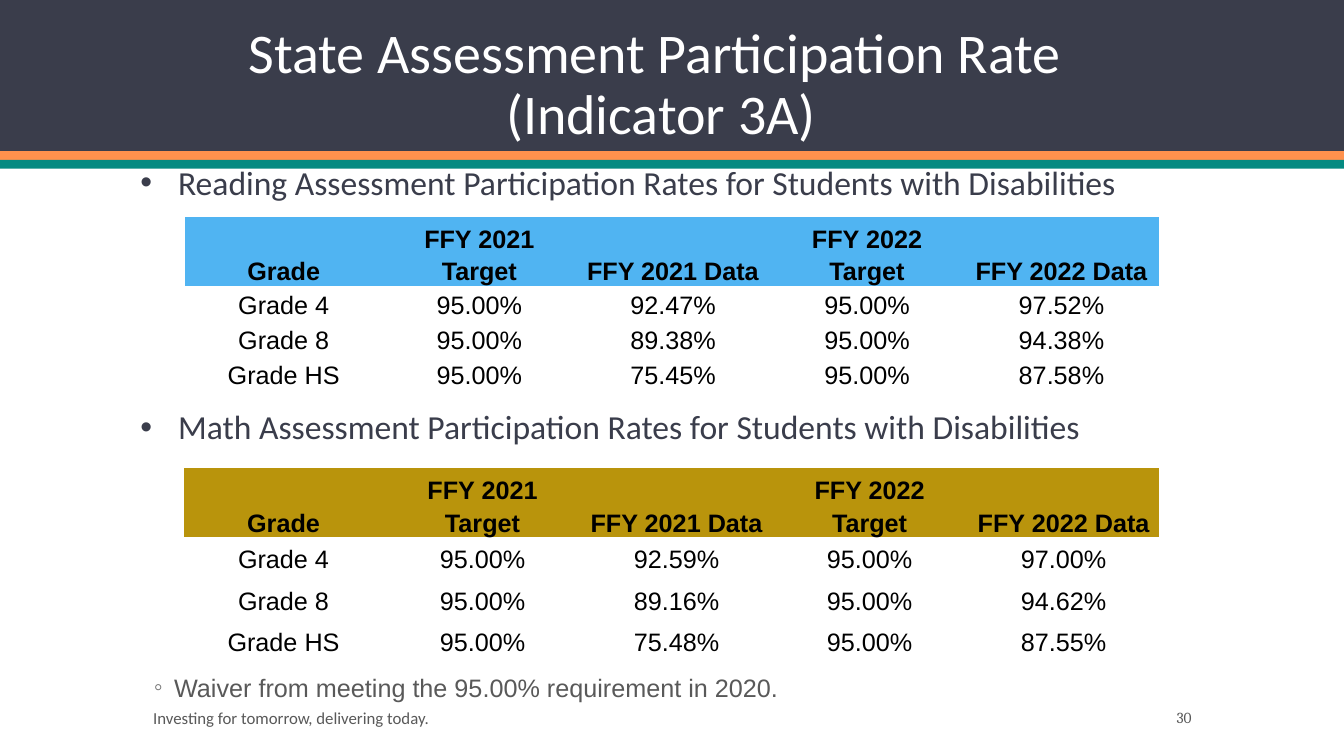
from dataclasses import dataclass
from typing import Any, Optional

import lxml.etree
import pptx
import pptx.dml.color
import pptx.enum.shapes
import pptx.enum.text
import pptx.oxml.ns
import pptx.util

Cm = pptx.util.Cm
Pt = pptx.util.Pt
RGBColor = pptx.dml.color.RGBColor
PP_ALIGN = pptx.enum.text.PP_ALIGN
MSO_ANCHOR = pptx.enum.text.MSO_ANCHOR
qn = pptx.oxml.ns.qn

NAVY = RGBColor(0x3A, 0x3D, 0x4B)
ORANGE = RGBColor(0xFF, 0x91, 0x4D)
TEAL = RGBColor(0x04, 0x8A, 0x81)
BLUE = RGBColor(0x50, 0xB4, 0xF2)
GOLD = RGBColor(0xB9, 0x94, 0x0C)
WHITE = RGBColor(0xFF, 0xFF, 0xFF)
BLACK = RGBColor(0, 0, 0)
GREY = RGBColor(0x59, 0x59, 0x59)
BULLET_GREY = RGBColor(0x71, 0x71, 0x71)

PLAIN_TABLE_STYLE = "{2D5ABB26-0587-4C30-8999-92F81FD0307C}"
HEADINGS = ["Grade", "FFY 2021 Target", "FFY 2021 Data", "FFY 2022 Target", "FFY 2022 Data"]
GRADES = ["Grade 4", "Grade 8", "Grade HS"]
TARGET = "95.00%"


@dataclass
class Band:
    height: float
    color: RGBColor


@dataclass
class Bullet:
    char: str
    color: RGBColor
    margin: float
    hanging: float


@dataclass
class TextBox:
    lines: list[str]
    left: float
    top: float
    width: float
    height: float
    font: str
    size: int
    color: RGBColor
    align: PP_ALIGN = PP_ALIGN.LEFT
    anchor: MSO_ANCHOR = MSO_ANCHOR.TOP
    line_spacing: float = 1.0
    gap: float = 0
    bullet: Optional[Bullet] = None


@dataclass
class RateTable:
    left: float
    top: float
    col_widths: list[float]
    row_height: float
    color: RGBColor
    rates_2021: list[str]
    rates_2022: list[str]


HEADER_HEIGHT = 1.64
BANDS = [Band(3.81, NAVY), Band(0.22, ORANGE), Band(0.22, TEAL)]

TEXTS = [
    TextBox(["State Assessment Participation Rate \v(Indicator 3A)"], 2.69, 0, 27.94, 3.81,
            "Calibri", 40, WHITE, PP_ALIGN.CENTER, MSO_ANCHOR.BOTTOM, 0.9),
    TextBox(["Investing for tomorrow, delivering today."], 3.61, 17.7, 17.35, 0.76,
            "Calibri", 12, GREY, anchor=MSO_ANCHOR.MIDDLE),
    TextBox(["30"], 26.47, 17.7, 3.81, 0.76, "Cambria", 11, GREY,
            PP_ALIGN.RIGHT, MSO_ANCHOR.MIDDLE),
    TextBox(["Reading Assessment Participation Rates for Students with Disabilities",
             "Math Assessment Participation Rates for Students with Disabilities"],
            2.97, 4.06, 27.94, 12.67, "Calibri", 24, NAVY, line_spacing=0.9, gap=149,
            bullet=Bullet("•", NAVY, 1.27, 0.95)),
    TextBox(["Waiver from meeting the 95.00% requirement in 2020."],
            3.63, 16.81, 27.94, 1.98, "Arial", 18, GREY,
            bullet=Bullet("◦", BULLET_GREY, 0.51, 0.51)),
]

TABLES = [
    RateTable(4.66, 5.46, [4.98, 4.88, 4.88, 4.9, 4.9], 0.82, BLUE,
              ["92.47%", "89.38%", "75.45%"], ["97.52%", "94.38%", "87.58%"]),
    RateTable(4.63, 11.79, [5.03, 5.0, 4.78, 4.95, 4.83], 1.04, GOLD,
              ["92.59%", "89.16%", "75.48%"], ["97.00%", "94.62%", "87.55%"]),
]


def format_paragraph(p: Any, font: str, size: int, color: RGBColor,
                     align: PP_ALIGN, line_spacing: float, bold: bool = False) -> None:
    p.alignment = align
    p.line_spacing = line_spacing
    for r in p.runs:
        r.font.name = font
        r.font.size = Pt(size)
        r.font.bold = bold
        r.font.color.rgb = color


def add_bullet(p: Any, bullet: Bullet) -> None:
    pPr = p._p.get_or_add_pPr()
    pPr.set("marL", str(Cm(bullet.margin)))
    pPr.set("indent", str(-Cm(bullet.hanging)))
    clr = lxml.etree.SubElement(pPr, qn("a:buClr"))
    lxml.etree.SubElement(clr, qn("a:srgbClr")).set("val", str(bullet.color))
    lxml.etree.SubElement(pPr, qn("a:buFont")).set("typeface", "Arial")
    lxml.etree.SubElement(pPr, qn("a:buChar")).set("char", bullet.char)


def draw_bands(s: Any, width: int, bands: list[Band]) -> None:
    top = 0.0
    for band in bands:
        sp = s.shapes.add_shape(pptx.enum.shapes.MSO_SHAPE.RECTANGLE,
                                0, Cm(top), width, Cm(band.height))
        sp.shadow.inherit = False
        sp.fill.solid()
        sp.fill.fore_color.rgb = band.color
        sp.line.fill.background()
        top += band.height


def draw_text(s: Any, box: TextBox) -> None:
    sp = s.shapes.add_textbox(Cm(box.left), Cm(box.top), Cm(box.width), Cm(box.height))
    tf = sp.text_frame
    tf.word_wrap = True
    tf.vertical_anchor = box.anchor
    for i, line in enumerate(box.lines):
        p = tf.add_paragraph() if i else tf.paragraphs[0]
        p.text = line
        format_paragraph(p, box.font, box.size, box.color, box.align, box.line_spacing)
        p.space_before = Pt(box.gap if i else 0)
        if box.bullet:
            add_bullet(p, box.bullet)


def draw_table(s: Any, rates: RateTable) -> None:
    rows = [HEADINGS] + [[grade, TARGET, old, TARGET, new] for grade, old, new
                         in zip(GRADES, rates.rates_2021, rates.rates_2022)]
    heights = [HEADER_HEIGHT] + [rates.row_height] * len(GRADES)
    tbl = s.shapes.add_table(len(rows), len(HEADINGS), Cm(rates.left), Cm(rates.top),
                             Cm(sum(rates.col_widths)), Cm(sum(heights))).table
    tbl.horz_banding = False
    tbl._tbl.tblPr.find(qn("a:tableStyleId")).text = PLAIN_TABLE_STYLE
    for col, width in zip(tbl.columns, rates.col_widths):
        col.width = Cm(width)
    for i, (row, height) in enumerate(zip(rows, heights)):
        is_header = i == 0
        tbl.rows[i].height = Cm(height)
        for j, value in enumerate(row):
            cell = tbl.cell(i, j)
            cell.margin_left = cell.margin_right = Cm(0.18)
            cell.margin_top = cell.margin_bottom = 0
            cell.vertical_anchor = MSO_ANCHOR.BOTTOM if is_header else MSO_ANCHOR.MIDDLE
            if is_header:
                cell.fill.solid()
                cell.fill.fore_color.rgb = rates.color
            else:
                cell.fill.background()
            p = cell.text_frame.paragraphs[0]
            p.text = value
            format_paragraph(p, "Arial", 18, BLACK, PP_ALIGN.CENTER, 1.15, is_header)


def main() -> None:
    prs = pptx.Presentation()
    prs.slide_width = Cm(33.87)
    prs.slide_height = Cm(19.05)
    s = prs.slides.add_slide(prs.slide_layouts[6])

    # Header bands
    draw_bands(s, prs.slide_width, BANDS)

    # Title, footer, bullets and note
    for box in TEXTS:
        draw_text(s, box)

    # Participation rates
    for rates in TABLES:
        draw_table(s, rates)

    prs.save("out.pptx")


if __name__ == "__main__":
    main()
